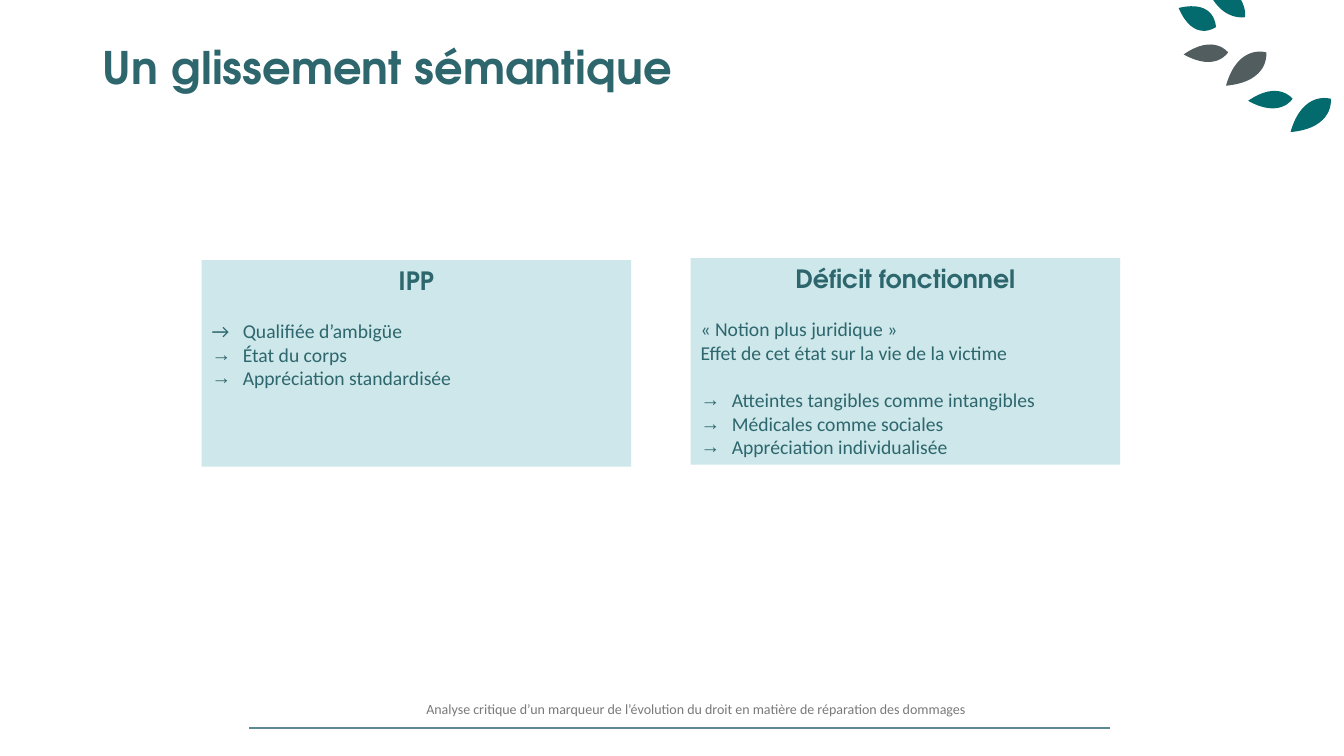
from dataclasses import dataclass
from typing import Any, NamedTuple

from lxml import etree
from pptx import Presentation, util as u
from pptx.dml import color
from pptx.enum import shapes, text
from pptx.oxml import ns

COLS, ROWS = 1333, 750
WIDTH, HEIGHT = u.Inches(13.33), u.Inches(7.5)
Rgb = color.RGBColor.from_string


@dataclass(frozen=True)
class Theme:
    ink: Any = Rgb("2D676D")
    panel: Any = Rgb("CDE7EA")
    teal: Any = Rgb("036A6E")
    slate: Any = Rgb("515D5F")
    rule: Any = Rgb("5F8896")
    grey: Any = Rgb("797979")
    head: str = "TeX Gyre Adventor"
    body: str = "Calibri"
    mark: str = "Arial"
    title: int = 32
    sub: int = 18
    item: int = 14
    foot: int = 10
    gap: int = 17


T = Theme()


class Pt(NamedTuple):
    col: float
    row: float


class Area(NamedTuple):
    col: int
    row: int
    cols: int
    rows: int


class Blade(NamedTuple):
    low: Pt
    end: Pt
    high: Pt


class Leaf(NamedTuple):
    tip: Pt
    blade: Blade
    tint: Any


class Item(NamedTuple):
    words: str
    hang: bool = False
    mark: str = ""
    gap: int = 0


class Panel(NamedTuple):
    area: Area
    head: str
    items: list[Item]


FLAT = Blade(Pt(32, 18), Pt(44, -2), Pt(30, -21))
TALL = Blade(Pt(44, -4), Pt(40, -33), Pt(12, -42))
STEEP = Blade(Pt(12, 45), Pt(41, 39), Pt(45, 9))
BROAD = Blade(Pt(15, 35), Pt(37, 19), Pt(37, -9))

LEAVES = [
    Leaf(Pt(1238, 100), FLAT, T.teal),
    Leaf(Pt(1280, 131), TALL, T.teal),
    Leaf(Pt(1194, -22), STEEP, T.teal),
    Leaf(Pt(1169, 8), BROAD, T.teal),
    Leaf(Pt(1174, 54), FLAT, T.slate),
    Leaf(Pt(1216, 85), TALL, T.slate),
]

PANELS = [
    Panel(Area(200, 258, 426, 205), "IPP", [
        Item("→\tQualifiée d’ambigüe", True, gap=T.gap),
        Item("État du corps", True, T.mark),
        Item("Appréciation standardisée", True, T.mark),
    ]),
    Panel(Area(685, 256, 426, 205), "Déficit fonctionnel", [
        Item("«\u00a0Notion plus juridique\u00a0»", gap=T.gap),
        Item("Effet de cet état sur la vie de la victime"),
        Item("Atteintes tangibles comme intangibles", True, T.mark, T.gap),
        Item("Médicales comme sociales", True, T.mark),
        Item("Appréciation individualisée", True, T.mark),
    ]),
]

HEAD = {"name": T.head, "bold": True}
BODY = {"name": T.body, "bold": False}


def across(cols: float) -> int:
    return round(WIDTH * cols / COLS)


def down(rows: float) -> int:
    return round(HEIGHT * rows / ROWS)


def place(area: Area) -> tuple[int, int, int, int]:
    return across(area.col), down(area.row), across(area.cols), down(area.rows)


def apply(target: Any, form: dict[str, Any]) -> None:
    for name, value in form.items():
        setattr(target, name, value)


def write(para: Any, words: str, size: int, tint: Any, form: dict[str, Any]) -> None:
    run = para.add_run()
    run.text = words
    apply(run.font, {"size": u.Pt(size), **form})
    run.font.color.rgb = tint


def indent(para: Any, mark: str) -> None:
    props = para._p.get_or_add_pPr()
    props.set("marL", str(across(31)))
    props.set("indent", str(across(-31)))
    if mark:
        etree.SubElement(props, ns.qn("a:buFont"), typeface=mark)
        etree.SubElement(props, ns.qn("a:buChar"), char="→")


def paint(shape: Any, tint: Any) -> None:
    shape.shadow.inherit = False
    shape.fill.solid()
    shape.fill.fore_color.rgb = tint
    shape.line.fill.background()


def draw_leaf(slide: Any, leaf: Leaf, steps: int = 16) -> None:
    low, end, high = leaf.blade

    def spot(point: Pt) -> tuple[int, int]:
        return across(leaf.tip.col + point.col), down(leaf.tip.row + point.row)

    def edge(bend: Pt, t: float) -> tuple[int, int]:
        near, far = 3 * (1 - t) ** 2 * t, 3 * (1 - t) * t ** 2 + t ** 3
        return spot(Pt(*(near * b + far * e for b, e in zip(bend, end))))

    rim = [edge(bend, i / steps) for bend in (low, high) for i in range(steps + 1)]
    form = slide.shapes.build_freeform(*rim[0], scale=1.0)
    form.add_line_segments(rim[1:], close=True)
    shape = form.convert_to_shape()
    paint(shape, leaf.tint)

    trace = shape._element.find(".//" + ns.qn("a:path"))
    for step in list(trace):
        trace.remove(step)
    tip = Pt(0, 0)
    for kind, points in (("moveTo", [tip]), ("cubicBezTo", [low, end, end]),
                         ("cubicBezTo", [end, high, tip]), ("close", [])):
        step = etree.SubElement(trace, ns.qn("a:" + kind))
        for x, y in map(spot, points):
            etree.SubElement(step, ns.qn("a:pt"),
                             x=str(x - shape.left), y=str(y - shape.top))


def draw_panel(slide: Any, panel: Panel) -> None:
    box = slide.shapes.add_shape(shapes.MSO_SHAPE.RECTANGLE, *place(panel.area))
    paint(box, T.panel)
    frame = box.text_frame
    apply(frame, {"word_wrap": True, "vertical_anchor": text.MSO_ANCHOR.TOP})
    first = frame.paragraphs[0]
    first.alignment = text.PP_ALIGN.CENTER
    write(first, panel.head, T.sub, T.ink, HEAD)
    for item in panel.items:
        para = frame.add_paragraph()
        if item.hang:
            indent(para, item.mark)
        apply(para, {"alignment": text.PP_ALIGN.LEFT, "space_before": u.Pt(item.gap)})
        write(para, item.words, T.item, T.ink, BODY)


def draw_text(slide: Any, area: Area, anchor: Any, form: dict[str, Any]) -> Any:
    frame = slide.shapes.add_textbox(*place(area)).text_frame
    apply(frame, {"word_wrap": True, "vertical_anchor": anchor})
    para = frame.paragraphs[0]
    apply(para, form)
    return para


def draw_rule(slide: Any, start: Pt, end: Pt) -> None:
    rule = slide.shapes.add_connector(
        shapes.MSO_CONNECTOR.STRAIGHT,
        across(start.col), down(start.row), across(end.col), down(end.row))
    rule.line.color.rgb = T.rule
    rule.line.width = u.Pt(1.5)
    etree.SubElement(rule._element.spPr, ns.qn("a:effectLst"))


def main() -> None:
    deck = Presentation()
    apply(deck, {"slide_width": WIDTH, "slide_height": HEIGHT})
    slide = deck.slides.add_slide(deck.slide_layouts[6])
    draw_rule(slide, Pt(247, 722), Pt(1101, 722))
    for leaf in LEAVES:
        draw_leaf(slide, leaf)
    title = draw_text(slide, Area(92, 40, 1019, 101), text.MSO_ANCHOR.TOP,
                      {"line_spacing": 0.9})
    write(title, "Un glissement sémantique", T.title, T.ink, HEAD)
    for panel in PANELS:
        draw_panel(slide, panel)
    foot = draw_text(slide, Area(413, 683, 572, 40), text.MSO_ANCHOR.MIDDLE,
                     {"alignment": text.PP_ALIGN.JUSTIFY})
    write(foot, "Analyse critique d’un marqueur de l’évolution du droit "
          "en matière de réparation des dommages", T.foot, T.grey, BODY)
    deck.save("out.pptx")


if __name__ == "__main__":
    main()
